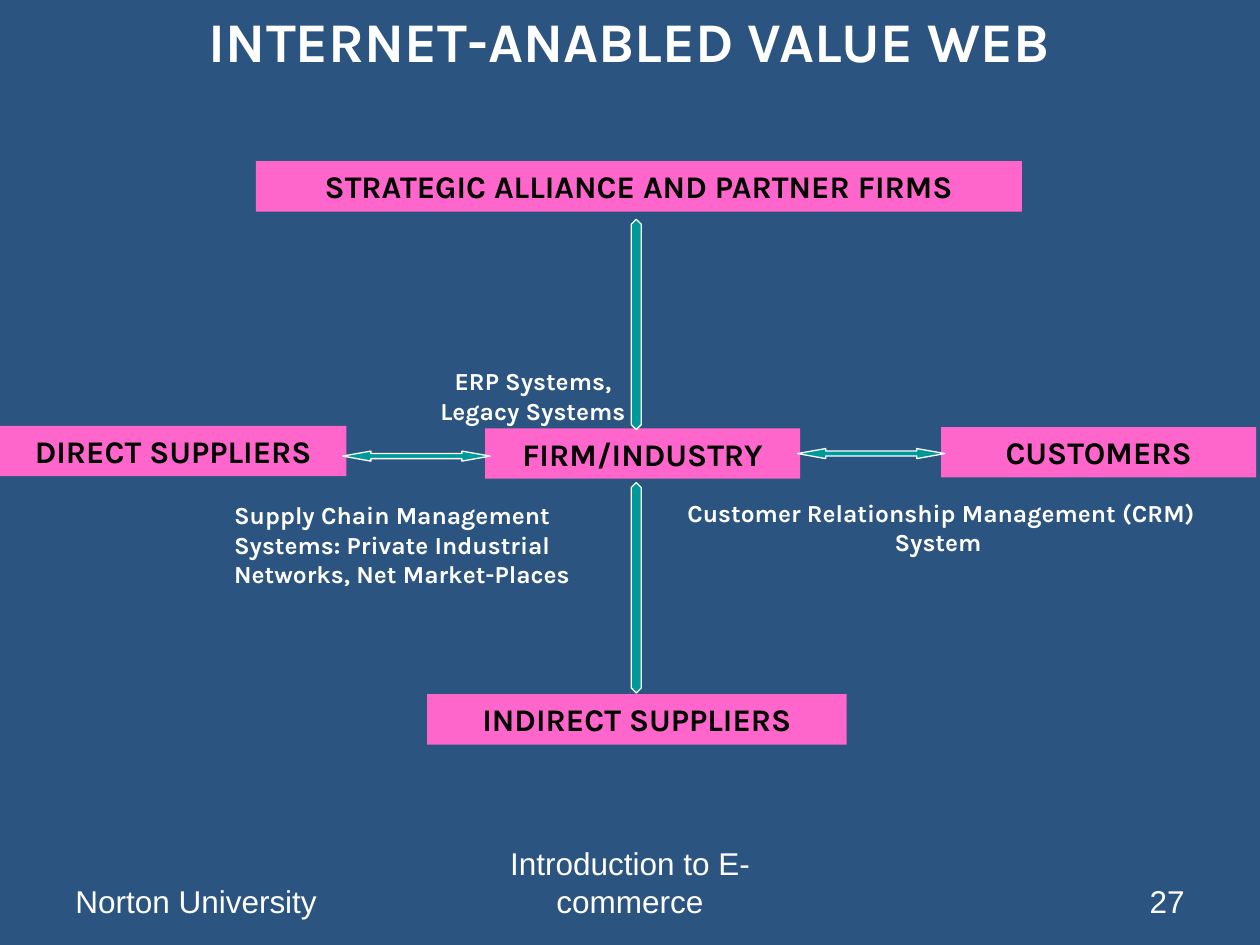
"""Build the value web slide."""
import pptx
import pptx.dml.color
import pptx.enum.shapes
import pptx.enum.text
import pptx.util

Inches = pptx.util.Inches
SHAPE = pptx.enum.shapes.MSO_SHAPE
ANCHOR = pptx.enum.text.MSO_ANCHOR
ALIGN = pptx.enum.text.PP_ALIGN
COLORS = {
    "background": "2B5481",
    "box": "FF66CC",
    "arrow": "009999",
    "light": "FFFFFF",
    "dark": "000000",
}


def color(name):
    """Return the named colour."""
    return pptx.dml.color.RGBColor.from_string(COLORS[name])


def set_text(sp, text, size, ink="light", align=ALIGN.CENTER,
             font="Karla", bold=True, anchor=ANCHOR.TOP):
    """Write one formatted paragraph in a shape."""
    tf = sp.text_frame
    tf.word_wrap = True
    tf.vertical_anchor = anchor
    p = tf.paragraphs[0]
    p.text = text
    p.alignment = align
    r = p.runs[0]
    r.font.name = font
    r.font.size = pptx.util.Pt(size)
    r.font.bold = bold
    r.font.color.rgb = color(ink)


def add_shape(s, kind, box, fill):
    """Add a filled shape without shadow or line."""
    sp = s.shapes.add_shape(kind, *map(Inches, box))
    sp.shadow.inherit = False
    sp.fill.solid()
    sp.fill.fore_color.rgb = color(fill)
    sp.line.fill.background()
    return sp


def add_title(s, left, top, width, height):
    """Add the slide title."""
    sp = s.shapes.add_textbox(*map(Inches, (left, top, width, height)))
    set_text(sp, "INTERNET-ANABLED VALUE WEB", 32)


def add_web(s, left, top, width, height):
    """Add the firm, its partners, the arrows and the system labels."""
    box_height, thickness = 0.4, 0.08
    parties = [
        ("FIRM/INDUSTRY", 3.85, 2.12, 2.5),
        ("CUSTOMERS", width - 2.53, 2.11, 2.5),
        ("INDIRECT SUPPLIERS", 3.39, height - box_height, 3.33),
        ("DIRECT SUPPLIERS", 0, 2.1, 2.75),
        ("STRATEGIC ALLIANCE AND PARTNER FIRMS", 2.03, 0, 6.08),
    ]
    for text, x, y, w in parties:
        box = (left + x, top + y, w, box_height)
        set_text(add_shape(s, SHAPE.RECTANGLE, box, "box"), text, 18, "dark")

    across = (SHAPE.LEFT_RIGHT_ARROW, 1.17, thickness, 2.8)
    upright = (SHAPE.UP_DOWN_ARROW, thickness, 1.67, 4)
    arrows = [
        (across, 2.72, 2.3),
        (across, 6.33, 2.28),
        (upright, 5.01, 0.46),
        (upright, 5.01, 2.55),
    ]
    for (kind, w, h, head), x, y in arrows:
        sp = add_shape(s, kind, (left + x, top + y, w, h), "arrow")
        sp.adjustments[0] = 0.5
        sp.adjustments[1] = head
        sp.line.color.rgb = color("light")
        sp.line.width = pptx.util.Pt(0.75)

    labels = [
        ("Supply Chain Management Systems: Private Industrial Networks, "
         "Net Market-Places", 1.76, 2.64, 3.17, 0.8, ALIGN.LEFT),
        ("Customer Relationship Management (CRM) System ",
         5.18, 2.62, 4.58, 0.57, ALIGN.CENTER),
        ("ERP Systems, Legacy Systems", 3.19, 1.58, 2.08, 0.57, ALIGN.CENTER),
    ]
    for text, x, y, w, h, align in labels:
        sp = s.shapes.add_textbox(*map(Inches, (left + x, top + y, w, h)))
        set_text(sp, text, 14, align=align)


def add_footer(s, left, top, width, height):
    """Add the footer texts at the left, centre and right."""
    side, middle = 2.33, 3.17
    parts = [
        ("Norton University", 0, side, ALIGN.LEFT),
        ("Introduction to E-commerce", (width - middle) / 2, middle, ALIGN.CENTER),
        ("27", width - side, side, ALIGN.RIGHT),
    ]
    for text, x, w, align in parts:
        sp = s.shapes.add_textbox(*map(Inches, (left + x, top, w, height)))
        set_text(sp, text, 18, align=align, font="Arial", bold=False,
                 anchor=ANCHOR.BOTTOM)


def main():
    """Build and save the presentation."""
    prs = pptx.Presentation()
    prs.slide_width, prs.slide_height = Inches(10), Inches(7.5)
    s = prs.slides.add_slide(prs.slide_layouts[6])
    s.background.fill.solid()
    s.background.fill.fore_color.rgb = color("background")
    add_footer(s, 0.5, 6.83, 9, 0.52)
    add_title(s, 0, 0, 10, 0.63)
    add_web(s, 0, 1.28, 10, 4.63)
    prs.save("out.pptx")


if __name__ == "__main__":
    main()
